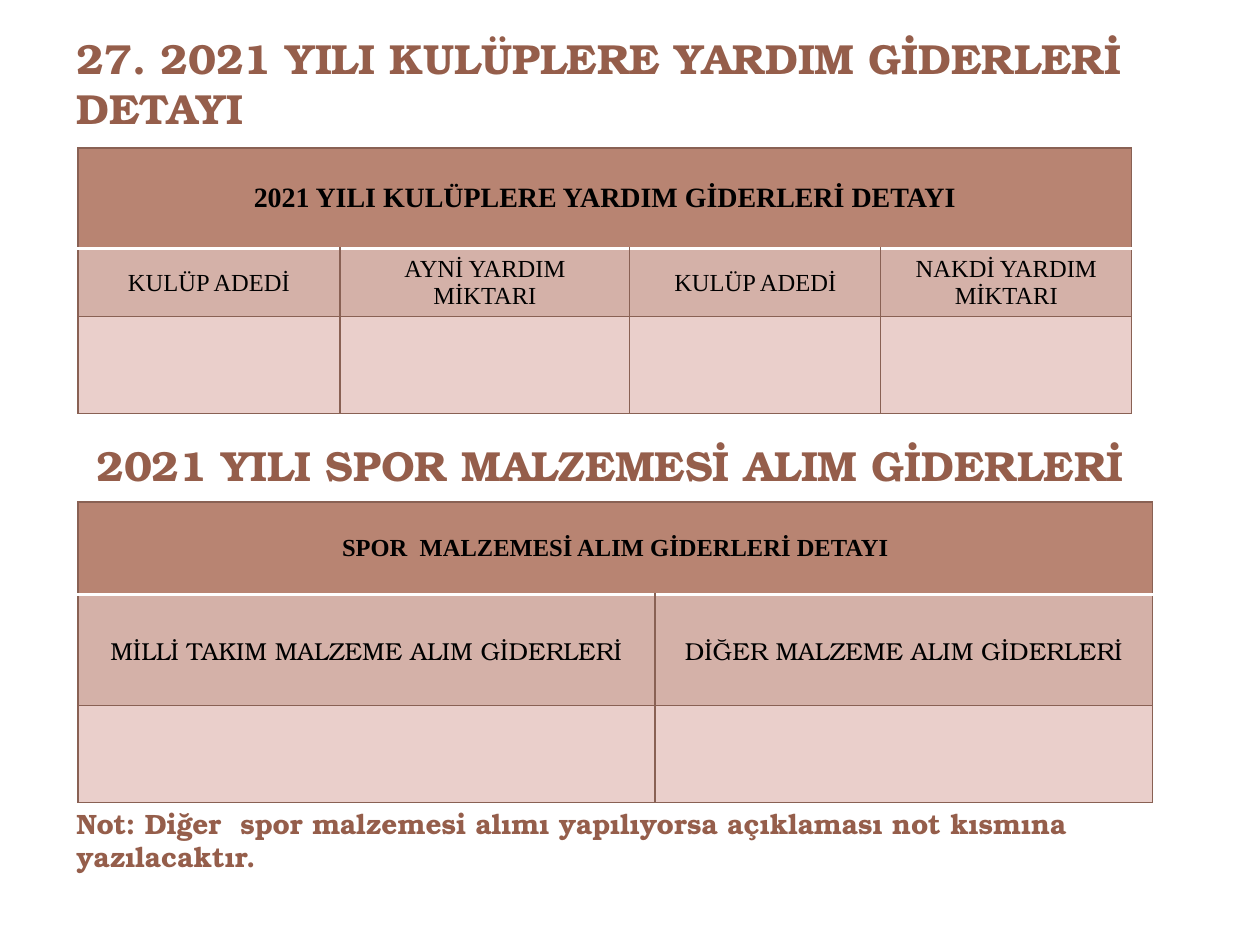
from dataclasses import dataclass

from lxml.etree import SubElement
from pptx import Presentation
from pptx.dml.color import RGBColor as Rgb
from pptx.enum.text import MSO_ANCHOR as Anchor, MSO_AUTO_SIZE as AutoSize, PP_ALIGN as Align
from pptx.oxml.ns import qn
from pptx.util import Emu, Pt

SCALE = 914400 // 126


@dataclass(frozen=True)
class Theme:
    accent: str = "955E4B"
    ink: str = "000000"
    header: str = "B88472"
    label: str = "D4B1A8"
    empty: str = "EACFCB"
    border: str = "896154"
    divider: str = "FFFFFF"
    display: str = "TeX Gyre Bonum"
    serif: str = "Times New Roman"
    heading_size: int = 24
    large_size: int = 16
    label_size: int = 14


THEME = Theme()


def px(length):
    return Emu(length * SCALE)


def add_run(para, text, font, size, color, bold=False):
    span = para.add_run()
    span.text = text
    span.font.name = font
    span.font.size = Pt(size)
    span.font.bold = bold
    span.font.color.rgb = Rgb.from_string(color)


def fill_text(shape, box, text, size):
    """Place a heading or note, set from the top left of its box."""
    shape.left, shape.top, shape.width, shape.height = map(px, box)
    frame = shape.text_frame
    frame.word_wrap = True
    frame.auto_size = AutoSize.NONE
    frame.vertical_anchor = Anchor.TOP
    para = frame.paragraphs[0]
    para.alignment = Align.LEFT
    add_run(para, text, THEME.display, size, THEME.accent, bold=True)


def add_text(page, box, text, size):
    fill_text(page.shapes.add_textbox(0, 0, 0, 0), box, text, size)


def set_border(cell, position, side, color, points):
    line = SubElement(cell._tc.get_or_add_tcPr(), qn(f"a:{side}"), w=str(Pt(points)))
    SubElement(SubElement(line, qn("a:solidFill")), qn("a:srgbClr"), val=color)
    # Border lines come before the fill
    cell._tc.tcPr.insert(position, line)


def style_cell(cell, row, fill):
    cell.vertical_anchor = Anchor.MIDDLE
    cell.fill.solid()
    cell.fill.fore_color.rgb = Rgb.from_string(fill)
    divided_side = {0: "lnB", 1: "lnT"}.get(row)
    for position, side in enumerate(("lnL", "lnR", "lnT", "lnB")):
        if side == divided_side:
            set_border(cell, position, side, THEME.divider, 2)
        else:
            set_border(cell, position, side, THEME.border, 0.75)


def write_cell(cell, text, font, size, bold=False):
    para = cell.text_frame.paragraphs[0]
    para.alignment = Align.CENTER
    add_run(para, text, font, size, THEME.ink, bold)


def add_expense_table(page, origin, widths, heights, header, header_size, labels, label_font):
    """A merged header, a row of labels and a row left open for entries."""
    box = (*origin, sum(widths), sum(heights))
    table = page.shapes.add_table(len(heights), len(widths), *map(px, box)).table
    for column, width in zip(table.columns, widths):
        column.width = px(width)
    for row, height in zip(table.rows, heights):
        row.height = px(height)

    for row, fill in enumerate((THEME.header, THEME.label, THEME.empty)):
        for column in range(len(widths)):
            style_cell(table.cell(row, column), row, fill)

    table.cell(0, 0).merge(table.cell(0, len(widths) - 1))
    write_cell(table.cell(0, 0), header, THEME.serif, header_size, bold=True)
    for column, label in enumerate(labels):
        write_cell(table.cell(1, column), label, label_font, THEME.label_size)


def build_expenses_page(deck):
    page = deck.slides.add_slide(deck.slide_layouts[5])

    # Aid to clubs
    fill_text(page.shapes.title, (64, 26, 1133, 87),
              "27. 2021 YILI KULÜPLERE YARDIM GİDERLERİ DETAYI", THEME.heading_size)
    add_expense_table(
        page, (78, 148), (262, 290, 251, 251), (101, 68, 97),
        "2021 YILI KULÜPLERE YARDIM GİDERLERİ DETAYI", THEME.large_size,
        ("KULÜP ADEDİ", "AYNİ YARDIM MİKTARI", "KULÜP ADEDİ", "NAKDİ YARDIM MİKTARI"),
        THEME.serif)

    # Sports equipment purchases
    add_text(page, (84, 433, 1133, 87),
             "2021 YILI SPOR MALZEMESİ ALIM GİDERLERİ", THEME.heading_size)
    add_expense_table(
        page, (78, 502), (577, 498), (93, 111, 97),
        "SPOR  MALZEMESİ ALIM GİDERLERİ DETAYI", THEME.label_size,
        ("MİLLİ TAKIM MALZEME ALIM GİDERLERİ", "DİĞER MALZEME ALIM GİDERLERİ"),
        THEME.display)

    # Closing note
    add_text(page, (64, 800, 1134, 97),
             "Not: Diğer  spor malzemesi alımı yapılıyorsa açıklaması not kısmına yazılacaktır.",
             THEME.large_size)


def main():
    deck = Presentation()
    deck.slide_width, deck.slide_height = px(1260), px(945)
    build_expenses_page(deck)
    deck.save("out.pptx")


if __name__ == "__main__":
    main()
